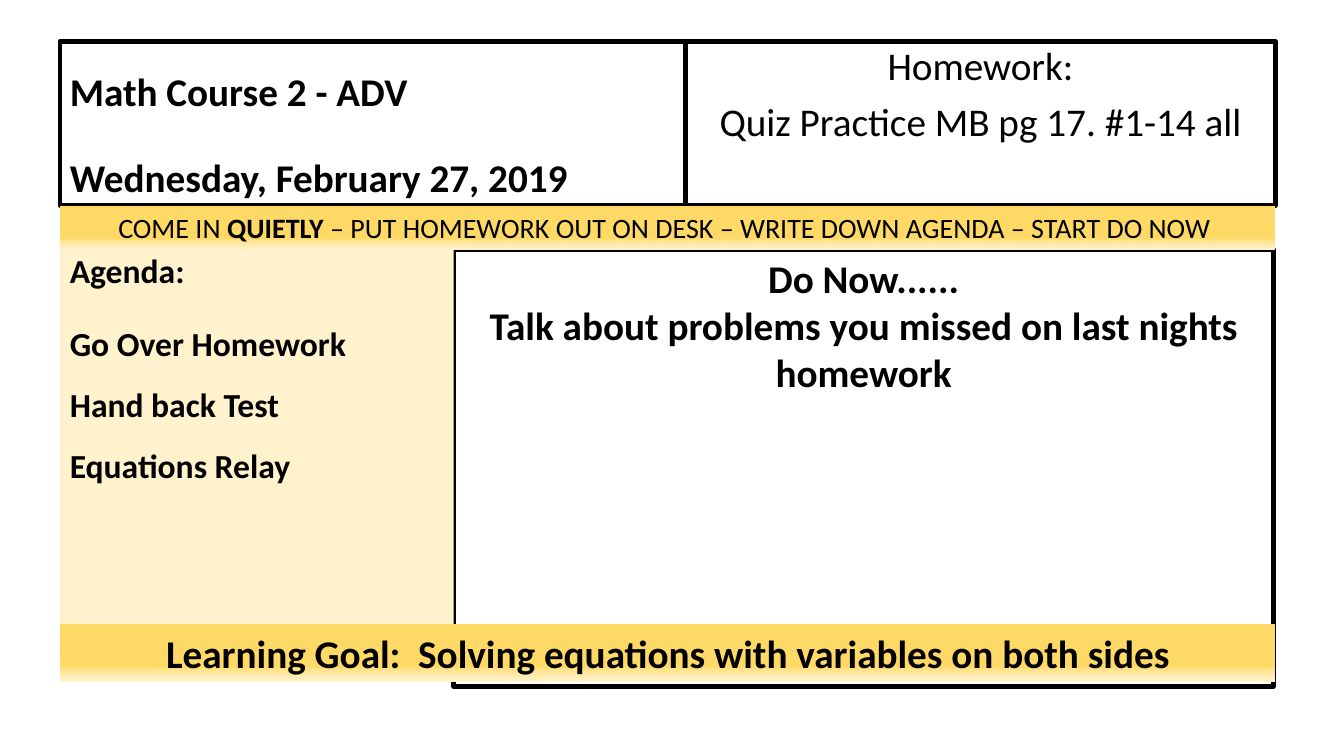
from dataclasses import dataclass

from lxml import etree
from pptx import Presentation
from pptx import util as u
from pptx.dml.color import RGBColor
from pptx.enum import shapes, text
from pptx.oxml.ns import qn

BLACK = RGBColor(0x00, 0x00, 0x00)
GOLD = RGBColor(0xFF, 0xD9, 0x66)
LIGHT_GOLD = RGBColor(0xFF, 0xE6, 0x99)
CREAM = RGBColor(0xFF, 0xF2, 0xCC)
GOLD_FADE = ((0, GOLD), (74, GOLD), (83, LIGHT_GOLD), (100, CREAM))

FONT = "Calibri"
SLIDE_W, SLIDE_H = u.Inches(13.33), u.Inches(7.5)

# Shared edges, in percent of the slide's width and height
LEFT, HEADER_SPLIT, RIGHT = 4.46, 51.0, 94.9
DO_NOW_LEFT, DO_NOW_RIGHT = 33.76, 94.75
HEADER_TOP, HEADER_BOTTOM, BANNER_BOTTOM = 5.47, 27.2, 33.0
GOAL_TOP, AGENDA_BOTTOM, GOAL_BOTTOM, DO_NOW_BOTTOM = 82.53, 87.2, 90.13, 90.8


@dataclass(frozen=True)
class Line:
    """One paragraph; every second piece between asterisks is bold."""
    words: str
    spacing: float = 1.0
    before: float = 0


@dataclass(frozen=True)
class Panel:
    left: float
    top: float
    right: float
    bottom: float
    lines: tuple[Line, ...]
    size: int = 28
    bold: bool = True
    centred: bool = True
    at_bottom: bool = False
    outlined: bool = False
    fill: RGBColor | tuple | None = None


def fill_gradient(shape, stops: tuple) -> None:
    """Fill a shape from top to bottom with the given colour stops."""
    shape.fill.gradient()
    shape.fill.gradient_angle = 270
    stop_list = shape._element.spPr.find(qn("a:gradFill")).find(qn("a:gsLst"))
    for old in list(stop_list):
        stop_list.remove(old)
    for percent, colour in stops:
        stop = etree.SubElement(stop_list, qn("a:gs"), pos=str(percent * 1000))
        etree.SubElement(stop, qn("a:srgbClr"), val=str(colour))


def write_line(paragraph, line: Line, *, size: int, bold: bool, centred: bool) -> None:
    paragraph.alignment = text.PP_ALIGN.CENTER if centred else text.PP_ALIGN.LEFT
    paragraph.line_spacing = line.spacing
    paragraph.space_before = u.Pt(line.before)
    for index, piece in enumerate(line.words.split("*")):
        run = paragraph.add_run()
        run.text = piece
        run.font.name = FONT
        run.font.size = u.Pt(size)
        run.font.bold = bold or index % 2 == 1
        run.font.color.rgb = BLACK


def draw_panel(slide, panel: Panel) -> None:
    shape = slide.shapes.add_shape(
        shapes.MSO_SHAPE.RECTANGLE,
        round(SLIDE_W * panel.left / 100),
        round(SLIDE_H * panel.top / 100),
        round(SLIDE_W * (panel.right - panel.left) / 100),
        round(SLIDE_H * (panel.bottom - panel.top) / 100),
    )
    shape.shadow.inherit = False

    # Fill and outline
    if panel.fill is None:
        shape.fill.background()
    elif isinstance(panel.fill, RGBColor):
        shape.fill.solid()
        shape.fill.fore_color.rgb = panel.fill
    else:
        fill_gradient(shape, panel.fill)
    if panel.outlined:
        shape.line.color.rgb = BLACK
        shape.line.width = u.Pt(3.25)
    else:
        shape.line.fill.background()

    # Text
    frame = shape.text_frame
    frame.word_wrap = True
    frame.vertical_anchor = (
        text.MSO_ANCHOR.BOTTOM if panel.at_bottom else text.MSO_ANCHOR.TOP
    )
    for index, line in enumerate(panel.lines):
        paragraph = frame.add_paragraph() if index else frame.paragraphs[0]
        write_line(paragraph, line, size=panel.size, bold=panel.bold,
                   centred=panel.centred)


COURSE = Panel(
    LEFT, HEADER_TOP, HEADER_SPLIT, HEADER_BOTTOM,
    (Line("Math Course 2 - ADV", 0.9),
     Line("Wednesday, February 27, 2019", 0.9, before=30.7)),
    centred=False, at_bottom=True, outlined=True,
)
HOMEWORK = Panel(
    HEADER_SPLIT, HEADER_TOP, RIGHT, HEADER_BOTTOM,
    (Line("Homework:", 0.9, before=10),
     Line("Quiz Practice MB pg 17. #1-14 all", 0.9, before=10)),
    bold=False, outlined=True,
)
DO_NOW = Panel(
    DO_NOW_LEFT, BANNER_BOTTOM, DO_NOW_RIGHT, DO_NOW_BOTTOM,
    (Line("Do Now......"),
     Line("Talk about problems you missed on last nights homework")),
    outlined=True,
)
ARRIVAL = Panel(
    LEFT, HEADER_BOTTOM, RIGHT, BANNER_BOTTOM,
    (Line("COME IN *QUIETLY* – PUT HOMEWORK OUT ON DESK"
          " – WRITE DOWN AGENDA – START DO NOW "),),
    size=20, bold=False, fill=GOLD_FADE,
)
AGENDA = Panel(
    LEFT, BANNER_BOTTOM, DO_NOW_LEFT, AGENDA_BOTTOM,
    (Line("Agenda:", 0.9),
     Line("Go Over Homework", 0.9, before=26.4),
     Line("Hand back Test", 1.5),
     Line("Equations Relay", 1.5)),
    size=24, centred=False, fill=CREAM,
)
GOAL = Panel(
    LEFT, GOAL_TOP, RIGHT, GOAL_BOTTOM,
    (Line("Learning Goal:  Solving equations with variables on both sides"),),
    fill=GOLD_FADE,
)


def main() -> None:
    deck = Presentation()
    deck.slide_width, deck.slide_height = SLIDE_W, SLIDE_H
    slide = deck.slides.add_slide(deck.slide_layouts[6])
    # Back to front
    for panel in (COURSE, HOMEWORK, DO_NOW, ARRIVAL, AGENDA, GOAL):
        draw_panel(slide, panel)
    deck.save("out.pptx")


if __name__ == "__main__":
    main()
